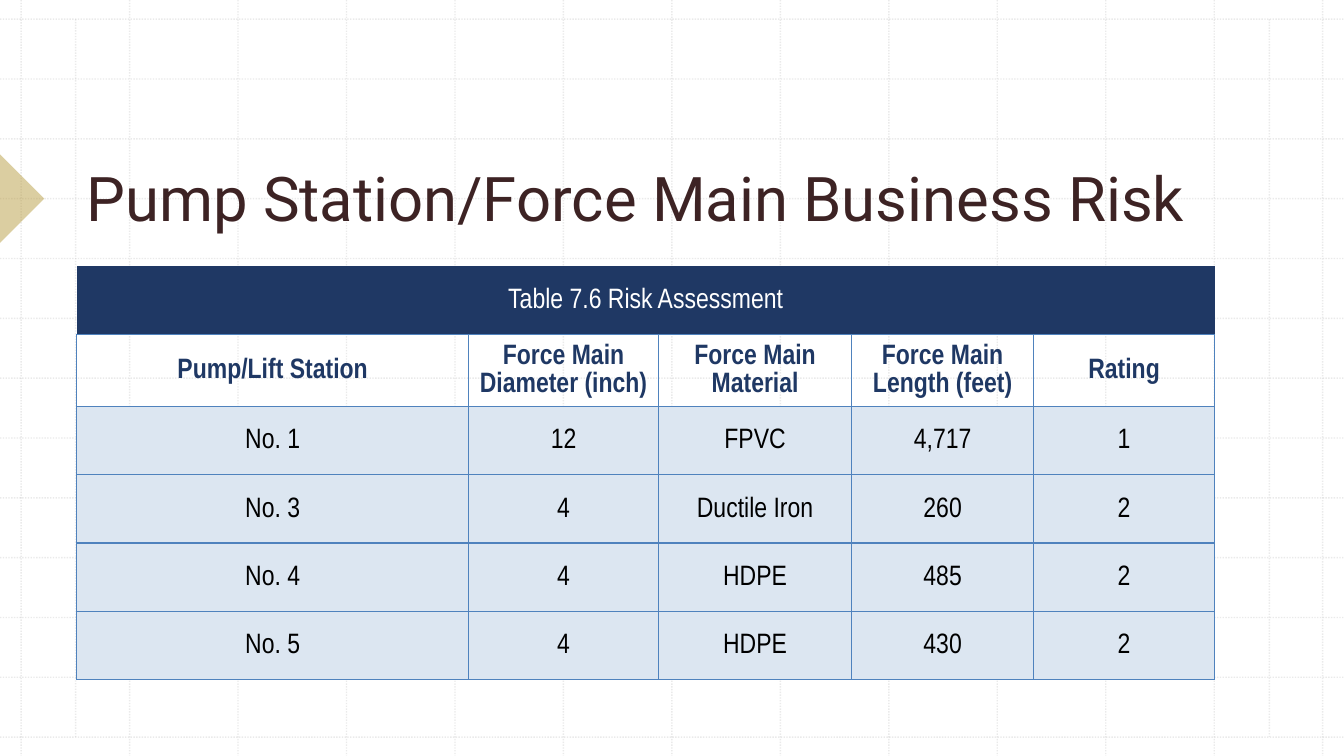
from lxml import etree
from pptx import Presentation
from pptx.dml.color import RGBColor
from pptx.enum.dml import MSO_LINE
from pptx.enum.shapes import MSO_CONNECTOR, MSO_SHAPE
from pptx.enum.text import MSO_ANCHOR, PP_ALIGN
from pptx.oxml.ns import qn
from pptx.util import Inches, Pt

STRAIGHT = MSO_CONNECTOR.STRAIGHT
DOTTED = MSO_LINE.ROUND_DOT
TRIANGLE = MSO_SHAPE.RIGHT_TRIANGLE
MIDDLE, BOTTOM = MSO_ANCHOR.MIDDLE, MSO_ANCHOR.BOTTOM
CENTER = PP_ALIGN.CENTER

GRAY = RGBColor(0xBC, 0xBC, 0xBC)
GOLD = RGBColor(0xB9, 0x9E, 0x44)
BROWN = RGBColor(0x3D, 0x23, 0x24)
NAVY = RGBColor(0x1F, 0x38, 0x64)
BLUE = RGBColor(0x4F, 0x82, 0xBD)
PALE = RGBColor(0xDC, 0xE6, 0xF1)
WHITE = RGBColor(0xFF, 0xFF, 0xFF)
BLACK = RGBColor(0, 0, 0)
NO_STYLE = "{2D5ABB26-0587-4C30-8999-92F81FD0307C}"

WIDTH, HEIGHT = 13.33, 7.5
LEFT, SPAN = 0.76, 11.29


def set_alpha(fill, percent):
    color = fill.find(".//" + qn("a:srgbClr"))
    etree.SubElement(color, qn("a:alpha"), val=str(percent * 1000))


def add_border(cell, side):
    edge = etree.SubElement(cell._tc.get_or_add_tcPr(), qn("a:" + side), w=str(Pt(1)))
    solid = etree.SubElement(edge, qn("a:solidFill"))
    etree.SubElement(solid, qn("a:srgbClr"), val=str(BLUE))


prs = Presentation()
prs.slide_width, prs.slide_height = Inches(WIDTH), Inches(HEIGHT)
slide = prs.slides.add_slide(prs.slide_layouts[6])
shapes = slide.shapes

# Dotted background grid
rows = [(0, 0.19 + 0.5936 * i, WIDTH, 0.19 + 0.5936 * i) for i in range(13)]
cols = [(0.21 + 1.0757 * i, 0, 0.21 + 1.0757 * i, HEIGHT) for i in range(13)]
margins = [(x, 0.19, x, 7.31) for x in (0.75, 12.59)]
for ends in rows + cols + margins:
    rule = shapes.add_connector(STRAIGHT, *[Inches(v) for v in ends])
    rule.line.color.rgb = GRAY
    rule.line.width = Pt(1)
    rule.line.dash_style = DOTTED
    set_alpha(rule.line._ln, 30)
    etree.SubElement(rule._element.spPr, qn("a:effectLst"))

# Gold marker on the left edge
mark = shapes.add_shape(TRIANGLE, Inches(-0.31), Inches(1.66), Inches(0.62), Inches(0.62))
mark.rotation = 225
mark.shadow.inherit = False
mark.fill.solid()
mark.fill.fore_color.rgb = GOLD
mark.line.fill.background()
set_alpha(mark._element.spPr, 50)

# Title
title = shapes.add_textbox(Inches(LEFT), Inches(0.79), Inches(SPAN), Inches(1.58))
frame = title.text_frame
frame.word_wrap = True
frame.vertical_anchor = BOTTOM
para = frame.paragraphs[0]
para.text = "Pump Station/Force Main Business Risk"
para.font.name, para.font.size = "Roboto", Pt(44)
para.font.color.rgb = BROWN

# Risk table
data = [
    ["Table 7.6 Risk Assessment", "", "", "", ""],
    ["Pump/Lift Station", "Force Main Diameter (inch)", "Force Main Material",
     "Force Main Length (feet)", "Rating"],
    ["No. 1", "12", "FPVC", "4,717", "1"],
    ["No. 3", "4", "Ductile Iron", "260", "2"],
    ["No. 4", "4", "HDPE", "485", "2"],
    ["No. 5", "4", "HDPE", "430", "2"],
]
# Text colour, bold, fill and borders of the caption, heading and body rows
looks = [(WHITE, False, NAVY, ["lnB"]),
         (NAVY, True, None, ["lnL", "lnR", "lnT", "lnB"]),
         (BLACK, False, PALE, ["lnL", "lnR", "lnT", "lnB"])]
cell_format = {"vertical_anchor": MIDDLE, "margin_left": Inches(0.07),
               "margin_right": Inches(0.07), "margin_top": 0, "margin_bottom": 0}
para_format = {"alignment": CENTER, "line_spacing": 1.07,
               "space_before": Pt(4), "space_after": Pt(4)}

holder = shapes.add_table(len(data), 5, Inches(LEFT), Inches(2.64), Inches(SPAN), Inches(4.07))
table = holder.table
table.first_row = table.horz_banding = False
table._tbl.tblPr.find(qn("a:tableStyleId")).text = NO_STYLE
for col, width in zip(table.columns, (3.89, 1.88, 1.92, 1.8, 1.8)):
    col.width = Inches(width)
table.cell(0, 0).merge(table.cell(0, 4))

for r, words in enumerate(data):
    color, bold, fill, sides = looks[min(r, 2)]
    for c, word in enumerate(words):
        cell = table.cell(r, c)
        for key, value in cell_format.items():
            setattr(cell, key, value)
        for side in sides:
            add_border(cell, side)
        if fill is None:
            cell.fill.background()
        else:
            cell.fill.solid()
            cell.fill.fore_color.rgb = fill
        if not word:
            continue
        para = cell.text_frame.paragraphs[0]
        para.text = word
        for key, value in para_format.items():
            setattr(para, key, value)
        font = para.runs[0].font
        font.name, font.size, font.bold = "Arial Narrow", Pt(20), bold
        font.color.rgb = color

prs.save("out.pptx")
